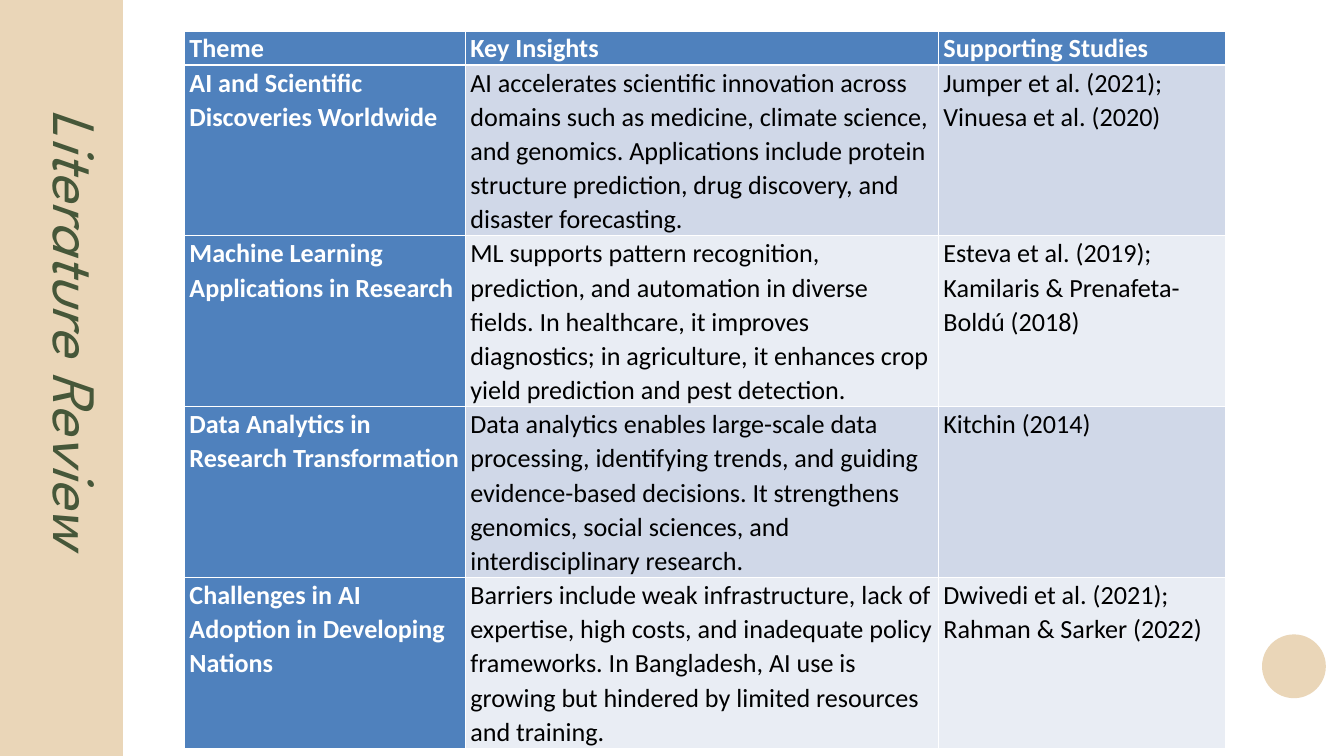
from dataclasses import dataclass

from lxml import etree
from pptx import Presentation
from pptx.dml.color import RGBColor as RGB
from pptx.enum.shapes import MSO_SHAPE as Shape
from pptx.enum.text import MSO_ANCHOR as Anchor, MSO_AUTO_SIZE as AutoSize, PP_ALIGN as Align
from pptx.oxml import parse_xml
from pptx.oxml.ns import nsdecls
from pptx.util import Inches, Pt


@dataclass(frozen=True)
class Theme:
    sand: str = "EAD6B8"
    green: str = "465739"
    blue: str = "4F81BD"
    bands: tuple = ("D0D8E8", "E9EDF4")
    white: str = "FFFFFF"
    black: str = "000000"
    title_font: str = "League Spartan"
    body_font: str = "Calibri"
    title_size: int = 66
    title_leading: int = 44
    table_size: int = 28
    table_spacing: float = 1.07
    thin: int = 1
    thick: int = 3


HEADER = ("Theme", "Key Insights", "Supporting Studies")
STUDIES = (
    ("AI and Scientific Discoveries Worldwide",
     "AI accelerates scientific innovation across domains such as medicine, climate science, "
     "and genomics. Applications include protein structure prediction, drug discovery, and "
     "disaster forecasting.",
     "Jumper et al. (2021); Vinuesa et al. (2020)"),
    ("Machine Learning Applications in Research",
     "ML supports pattern recognition, prediction, and automation in diverse fields. "
     "In healthcare, it improves diagnostics; in agriculture, it enhances crop yield "
     "prediction and pest detection.",
     "Esteva et al. (2019); Kamilaris & Prenafeta-Boldú (2018)"),
    ("Data Analytics in Research Transformation",
     "Data analytics enables large-scale data processing, identifying trends, and guiding "
     "evidence-based decisions. It strengthens genomics, social sciences, and "
     "interdisciplinary research.",
     "Kitchin (2014)"),
    ("Challenges in AI Adoption in Developing Nations",
     "Barriers include weak infrastructure, lack of expertise, high costs, and inadequate "
     "policy frameworks. In Bangladesh, AI use is growing but hindered by limited resources "
     "and training.",
     "Dwivedi et al. (2021); Rahman & Sarker (2022)"),
)


class SlideBuilder:
    """Holds the theme and the slide being built."""

    def __init__(self, slide, theme):
        self.slide = slide
        self.theme = theme

    def style(self, p, font, size, color, bold=False, italic=False):
        for r in p.runs:
            r.font.name = font
            r.font.size = Pt(size)
            r.font.color.rgb = RGB.from_string(color)
            r.font.bold = bold
            r.font.italic = italic

    def shape(self, kind, left, top, width, height, color):
        sp = self.slide.shapes.add_shape(
            kind, Inches(left), Inches(top), Inches(width), Inches(height))
        sp.shadow.inherit = False
        sp.fill.solid()
        sp.fill.fore_color.rgb = RGB.from_string(color)
        sp.line.fill.background()

    def title(self, text, left, top, width, height, rotation):
        """Fill the title placeholder and bring it in front of the shapes drawn so far."""
        t = self.theme
        sp = self.slide.shapes.title
        sp.left, sp.top = Inches(left), Inches(top)
        sp.width, sp.height = Inches(width), Inches(height)
        sp.rotation = rotation
        tf = sp.text_frame
        tf.text = text
        tf.word_wrap = True
        tf.auto_size = AutoSize.SHAPE_TO_FIT_TEXT
        tf.vertical_anchor = Anchor.TOP
        tf.margin_left = tf.margin_right = tf.margin_top = tf.margin_bottom = 0
        p = tf.paragraphs[0]
        p.alignment = Align.LEFT
        p.line_spacing = Pt(t.title_leading)
        self.style(p, t.title_font, t.title_size, t.green, italic=True)
        sp.element.getparent().append(sp.element)

    def borders(self, cell, top, bottom):
        tc_pr = cell._tc.get_or_add_tcPr()
        thin = self.theme.thin
        for side, width in (("L", thin), ("R", thin), ("T", top), ("B", bottom)):
            ln = parse_xml(f'<a:ln{side} {nsdecls("a")} w="{Pt(width)}"/>')
            fill = etree.SubElement(ln, ln.tag.replace(f"ln{side}", "solidFill"))
            etree.SubElement(fill, ln.tag.replace(f"ln{side}", "srgbClr"), val=self.theme.white)
            tc_pr.append(ln)

    def cell(self, cell, text, row, col):
        t = self.theme
        heading = row == 0 or col == 0
        self.borders(cell, t.thick if row == 1 else t.thin, t.thick if row == 0 else t.thin)
        cell.fill.solid()
        cell.fill.fore_color.rgb = RGB.from_string(t.blue if heading else t.bands[(row - 1) % 2])
        cell.margin_left = cell.margin_right = Inches(0.07)
        cell.margin_top = cell.margin_bottom = 0
        cell.text_frame.text = text
        p = cell.text_frame.paragraphs[0]
        p.line_spacing = t.table_spacing
        self.style(p, t.body_font, t.table_size, t.white if heading else t.black, bold=heading)

    def table(self, rows, left, top, col_widths, row_heights):
        table = self.slide.shapes.add_table(
            len(rows), len(col_widths), Inches(left), Inches(top),
            Inches(sum(col_widths)), Inches(sum(row_heights))).table
        for column, width in zip(table.columns, col_widths):
            column.width = Inches(width)
        for i, (row, height) in enumerate(zip(rows, row_heights)):
            table.rows[i].height = Inches(height)
            for j, text in enumerate(row):
                self.cell(table.cell(i, j), text, i, j)


def main():
    prs = Presentation()
    prs.slide_width, prs.slide_height = Inches(20), Inches(11.25)
    theme = Theme()
    s = SlideBuilder(prs.slides.add_slide(prs.slide_layouts[5]), theme)
    s.table((HEADER, *STUDIES), 2.75, 0.46, (4.18, 7.04, 4.27), (0.5,) + (2.5,) * len(STUDIES))
    s.shape(Shape.RECTANGLE, 0, -0.52, 1.83, 12.29, theme.sand)
    s.title("Literature Review", -3.08, 5.32, 7.99, 0.62, rotation=90)
    s.shape(Shape.OVAL, 18.78, 9.44, 0.95, 0.95, theme.sand)
    prs.save("out.pptx")


if __name__ == "__main__":
    main()
